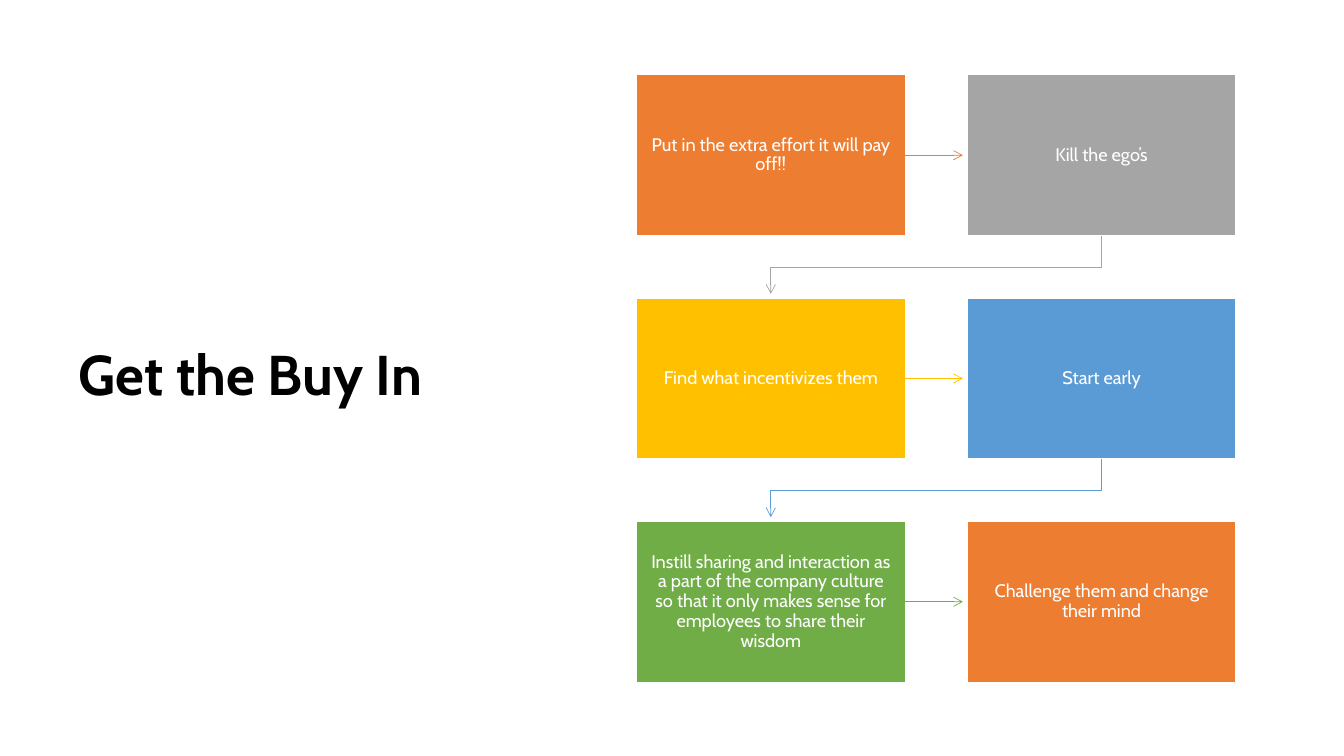
from pptx import Presentation
from pptx.dml.color import RGBColor
from pptx.enum.shapes import MSO_CONNECTOR as Connector, MSO_SHAPE as Shape
from pptx.enum.text import MSO_ANCHOR as Anchor, MSO_AUTO_SIZE as AutoSize, PP_ALIGN as Align
from pptx.oxml.ns import qn
from pptx.util import Inches, Pt
from lxml.etree import SubElement

COLORS = {
    "orange": "ED7D31", "gray": "A5A5A5", "gold": "FFC000",
    "blue": "5B9BD5", "green": "70AD47", "white": "FFFFFF", "black": "000000",
}
STEPS = [
    ("Put in the extra effort it will pay off!!", "orange"),
    ("Kill the ego’s", "gray"),
    ("Find what incentivizes them", "gold"),
    ("Start early", "blue"),
    ("Instill sharing and interaction as a part of the company culture "
     "so that it only makes sense for employees to share their wisdom", "green"),
    ("Challenge them and change their mind", "orange"),
]
COLUMNS = 2
STEP_W, STEP_H = 2.67, 1.6
ARROW_GAP = 0.04  # space between an arrow tip and the next step
ELBOW_DROP = 0.31
STEP_FRAME = {
    "word_wrap": True, "vertical_anchor": Anchor.MIDDLE,
    "margin_left": Inches(0.13), "margin_right": Inches(0.13),
    "margin_top": Inches(0.14), "margin_bottom": Inches(0.14),
}
TITLE_FRAME = {
    "word_wrap": True, "vertical_anchor": Anchor.MIDDLE, "auto_size": AutoSize.NONE,
}


def rgb(name):
    return RGBColor.from_string(COLORS[name])


def set_all(target, values):
    for name, value in values.items():
        setattr(target, name, value)


def write_text(shape, text, frame_format, align, color, **font_format):
    frame = shape.text_frame
    frame.text = text
    set_all(frame, frame_format)
    paragraph = frame.paragraphs[0]
    set_all(paragraph, {"alignment": align, "line_spacing": 0.9})
    set_all(paragraph.runs[0].font, {"name": "Cabin", **font_format})
    paragraph.runs[0].font.color.rgb = rgb(color)


def style_arrow(arrow, color):
    arrow.line.color.rgb = rgb(color)
    arrow.line.width = Pt(0.5)
    SubElement(arrow.line._get_or_add_ln(), qn("a:tailEnd"), type="arrow")


def add_title(slide, left, top, width, height):
    title = slide.shapes.title
    set_all(title, {"left": Inches(left), "top": Inches(top),
                    "width": Inches(width), "height": Inches(height)})
    write_text(title, "Get the Buy In", TITLE_FRAME, Align.LEFT, "black",
               size=Pt(40), bold=True)


def add_step(slide, left, top, text, color):
    step = slide.shapes.add_shape(Shape.RECTANGLE, Inches(left), Inches(top),
                                  Inches(STEP_W), Inches(STEP_H))
    step.shadow.inherit = False
    step.fill.solid()
    step.fill.fore_color.rgb = rgb(color)
    step.line.color.rgb = rgb("white")
    step.line.width = Pt(1)
    write_text(step, text, STEP_FRAME, Align.CENTER, "white", size=Pt(13))
    return step


def add_across_arrow(slide, step, next_step, color):
    middle = step.top + step.height // 2
    arrow = slide.shapes.add_connector(
        Connector.STRAIGHT, step.left + step.width, middle,
        next_step.left - Inches(ARROW_GAP), middle)
    arrow.begin_connect(step, 3)
    SubElement(arrow._element.spPr, qn("a:effectLst"))
    style_arrow(arrow, color)


def add_down_arrow(slide, step, next_step, color):
    start_x = step.left + step.width // 2
    start_y = step.top + step.height
    end_x = next_step.left + next_step.width // 2
    bend_y = start_y + Inches(ELBOW_DROP)
    builder = slide.shapes.build_freeform(start_x, start_y)
    builder.add_line_segments(
        [(start_x, bend_y), (end_x, bend_y),
         (end_x, next_step.top - Inches(ARROW_GAP))], close=False)
    arrow = builder.convert_to_shape()
    arrow.shadow.inherit = False
    arrow.fill.background()
    style_arrow(arrow, color)


def add_flow(slide, left, top, width, height):
    rows = len(STEPS) // COLUMNS
    pitch_x = (width - STEP_W) / (COLUMNS - 1)
    pitch_y = (height - STEP_H) / (rows - 1)
    steps = []
    for index, (text, color) in enumerate(STEPS):
        row, column = divmod(index, COLUMNS)
        steps.append(add_step(slide, left + column * pitch_x,
                              top + row * pitch_y, text, color))
    # Arrows run along each row, then down to the start of the next
    for index, (step, next_step) in enumerate(zip(steps, steps[1:])):
        ends_row = (index + 1) % COLUMNS == 0
        add_arrow = add_down_arrow if ends_row else add_across_arrow
        add_arrow(slide, step, next_step, STEPS[index][1])


def main():
    deck = Presentation()
    deck.slide_width, deck.slide_height = Inches(13.33), Inches(7.5)
    slide = deck.slides.add_slide(deck.slide_layouts[5])
    add_title(slide, 0.68, 1.27, 3.94, 4.95)
    add_flow(slide, 6.31, 0.74, 5.95, 6.03)
    deck.save("out.pptx")


if __name__ == "__main__":
    main()
